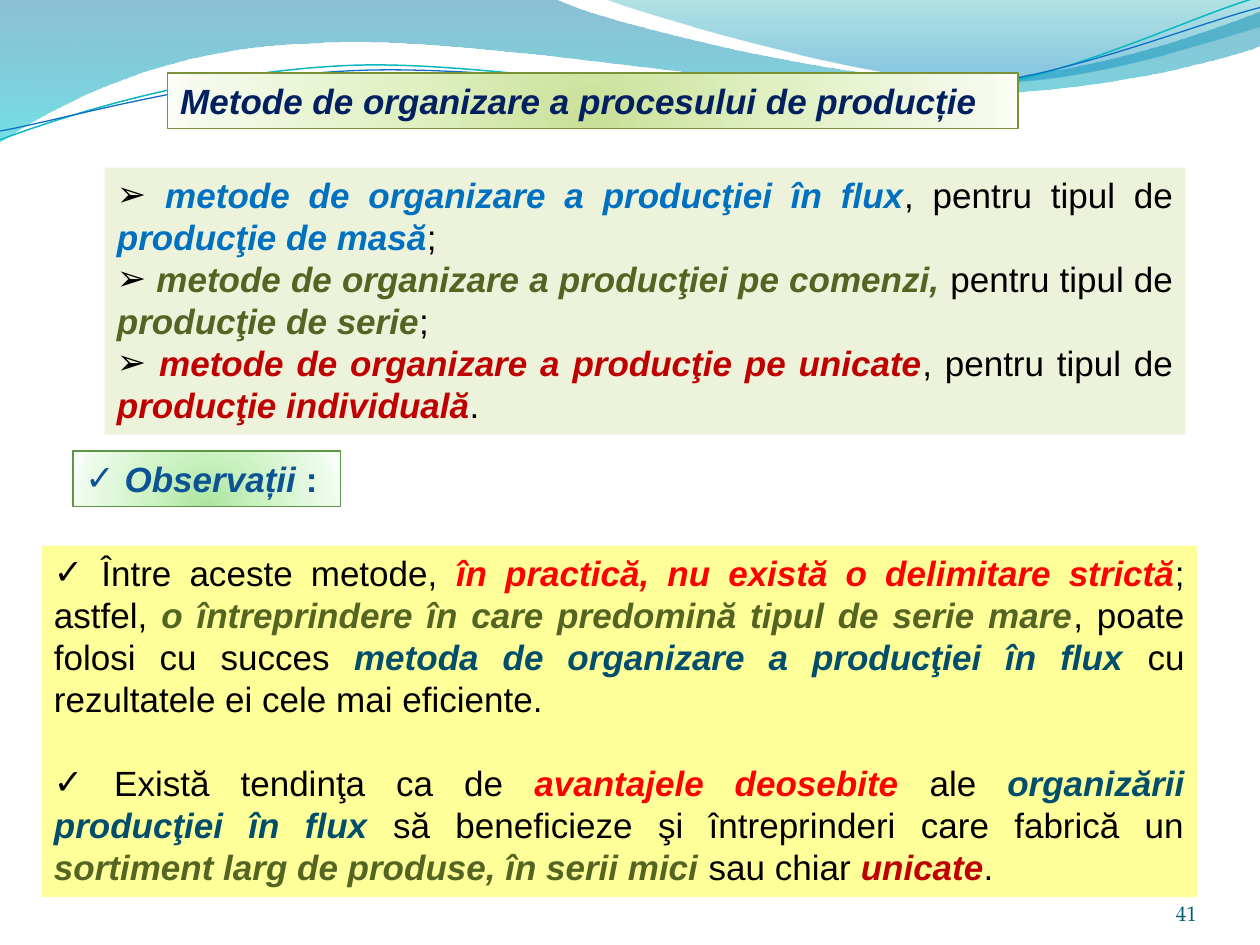
"""Build the slide on methods of organising the production process."""
from dataclasses import dataclass
from typing import Optional

import lxml.etree
import pptx
import pptx.dml.color
import pptx.enum.shapes
import pptx.enum.text
import pptx.oxml
import pptx.oxml.ns
import pptx.util

Inches = pptx.util.Inches
ALIGN = pptx.enum.text.PP_ALIGN
ANCHOR = pptx.enum.text.MSO_ANCHOR
FIT = pptx.enum.text.MSO_AUTO_SIZE

COLORS = {
    "black": "000000", "navy": "002060", "blue": "0070C0", "olive": "546422",
    "crimson": "C00000", "red": "FF0000", "petrol": "004E6C", "royal": "0B5394",
    "teal": "045D75", "pale green": "EDF3DB", "yellow": "FFFF99",
    "olive edge": "7B9135", "green edge": "5B9747",
    "wave cyan": "0AB8BF", "wave blue": "0F6FC6",
}


@dataclass
class Span:
    """A stretch of text in one format."""
    text: str
    color: str = "black"
    bold: bool = False
    italic: bool = False


@dataclass
class Stop:
    """A gradient stop: position and opacity in percent."""
    position: int
    color: str
    opacity: int = 100


@dataclass
class Wave:
    """A curved outline, where six numbers are a Bezier curve and two a line."""
    start: tuple
    segments: list
    gradient: Optional[list] = None
    line: Optional[str] = None
    width: float = 0.75


@dataclass
class Panel:
    """A filled rectangle with paragraphs of text."""
    frame: tuple
    paragraphs: list
    fill: Optional[str] = None
    gradient: Optional[list] = None
    line: Optional[str] = None
    bullet: Optional[str] = None
    wrap: bool = True
    gap: float = 0
    fit: FIT = FIT.SHAPE_TO_FIT_TEXT


def strong(text: str, color: str) -> Span:
    """Return a bold italic span."""
    return Span(text, color, True, True)


def rgb(name: str) -> pptx.dml.color.RGBColor:
    """Return a named colour."""
    return pptx.dml.color.RGBColor.from_string(COLORS[name])


def fill_gradient(shape, stops: list, direction: str) -> None:
    """Fill a shape with a gradient."""
    shape.fill.solid()
    solid = shape.element.spPr.find(pptx.oxml.ns.qn("a:solidFill"))
    marks = "".join(
        f'<a:gs pos="{stop.position * 1000}"><a:srgbClr val="{stop.color}">'
        f'<a:alpha val="{stop.opacity * 1000}"/></a:srgbClr></a:gs>' for stop in stops)
    gradient = pptx.oxml.parse_xml(
        f'<a:gradFill {pptx.oxml.ns.nsdecls("a")} rotWithShape="1">'
        f"<a:gsLst>{marks}</a:gsLst>{direction}</a:gradFill>")
    solid.getparent().replace(solid, gradient)


def bend(shape, segments: list) -> None:
    """Turn the straight sides of a freeform into their Bezier curves."""
    sides = list(shape.element.iter(pptx.oxml.ns.qn("a:lnTo")))
    for side, segment in zip(sides, segments):
        if len(segment) == 6:
            curve = lxml.etree.Element(pptx.oxml.ns.qn("a:cubicBezTo"))
            for x, y in zip(segment[::2], segment[1::2]):
                point = lxml.etree.SubElement(curve, pptx.oxml.ns.qn("a:pt"))
                point.set("x", str(Inches(x) - shape.left))
                point.set("y", str(Inches(y) - shape.top))
            side.getparent().replace(side, curve)


def draw_wave(page, wave: Wave) -> None:
    """Draw a filled wave or an open wave line."""
    builder = page.shapes.build_freeform(*map(Inches, wave.start), scale=1.0)
    ends = [tuple(map(Inches, segment[-2:])) for segment in wave.segments]
    builder.add_line_segments(ends, close=wave.gradient is not None)
    shape = builder.convert_to_shape()
    bend(shape, wave.segments)
    shape.shadow.inherit = False
    if wave.gradient:
        fill_gradient(shape, wave.gradient, '<a:lin ang="5400000" scaled="1"/>')
        shape.line.fill.background()
    else:
        shape.fill.background()
        shape.line.color.rgb = rgb(wave.line)
        shape.line.width = pptx.util.Pt(wave.width)


def write(box, paragraphs: list, *, size: float = 20, font: str = "Arial",
          align=ALIGN.JUSTIFY, anchor=ANCHOR.TOP, fit=FIT.SHAPE_TO_FIT_TEXT,
          wrap: bool = True, bullet: Optional[str] = None, gap: float = 0) -> None:
    """Write paragraphs of spans into a shape."""
    frame = box.text_frame
    frame.word_wrap, frame.auto_size, frame.vertical_anchor = wrap, fit, anchor
    for index, spans in enumerate(paragraphs):
        para = frame.add_paragraph() if index else frame.paragraphs[0]
        para.alignment = align
        para.space_before = pptx.util.Pt(gap if index else 0)
        if bullet:
            properties = para._p.get_or_add_pPr()
            properties.set("marL", "0")
            properties.set("indent", "0")
            for tag, name, value in (("a:buFont", "typeface", font), ("a:buChar", "char", bullet)):
                lxml.etree.SubElement(properties, pptx.oxml.ns.qn(tag)).set(name, value)
        for span in spans:
            run = para.add_run()
            run.text = span.text
            run.font.name, run.font.size = font, pptx.util.Pt(size)
            run.font.bold, run.font.italic = span.bold, span.italic
            run.font.color.rgb = rgb(span.color)


def format_panel(shape, panel: Panel) -> None:
    """Place, paint and fill in a panel."""
    shape.left, shape.top, shape.width, shape.height = map(Inches, panel.frame)
    if panel.gradient:
        fill_gradient(shape, panel.gradient, '<a:path path="circle"><a:fillToRect '
                      'l="50000" t="130000" r="50000" b="-30000"/></a:path>')
    else:
        shape.fill.solid()
        shape.fill.fore_color.rgb = rgb(panel.fill)
    if panel.line:
        shape.line.color.rgb = rgb(panel.line)
        shape.line.width = pptx.util.Pt(0.75)
    else:
        shape.line.fill.background()
    shape.shadow.inherit = False
    write(shape, panel.paragraphs, wrap=panel.wrap, bullet=panel.bullet, gap=panel.gap,
          fit=panel.fit, align=ALIGN.JUSTIFY if panel.wrap else ALIGN.LEFT)


def method(name: str, joint: str, kind: str, end: str, color: str) -> list:
    """Return the spans of one method of organisation."""
    return [Span(" "), strong(name, color), Span(joint), strong(kind, color), Span(end)]


WAVES = [
    Wave((0, 0), [(4.4, -0.01), (4.76, 0.17, 6.64, 0.63, 7.58, 0.63),
                  (8.53, 0.63, 9.58, 0.26, 10, 0.09), (10.01, 0.36),
                  (9.83, 0.44, 8.7, 0.76, 7.46, 0.75), (6.22, 0.75, 3.82, 0.28, 2.57, 0.34),
                  (1.29, 0.36, 0.46, 0.83, -0.01, 1.13)],
         gradient=[Stop(0, "0074A1", 45), Stop(100, "00C6CF", 55)]),
    Wave((4.79, -0.01), [(5.09, 0.11, 6.82, 0.62, 7.69, 0.65),
                         (8.56, 0.69, 9.61, 0.32, 10, 0.21), (10, 0)],
         gradient=[Stop(0, "00A1A9", 30), Stop(80, "008BBF", 45)]),
    Wave((0, 1.11), [(0.48, 0.93, 1.58, 0.57, 2.77, 0.52), (3.95, 0.47, 5.93, 0.89, 7.13, 0.8),
                     (8.33, 0.71, 9.38, 0.15, 9.98, -0.02)], line="wave cyan", width=0.85),
    Wave((0, 1.04), [(0.47, 0.96, 1.64, 0.61, 2.83, 0.56), (4.03, 0.51, 5.97, 0.84, 7.17, 0.75),
                     (8.36, 0.67, 9.41, 0.21, 10, 0.06)], line="wave blue"),
]
TITLE = Panel(
    (1.33, 0.58, 6.75, 0.44), fit=FIT.NONE, line="olive edge",
    paragraphs=[[strong("Metode de organizare a procesului de producție ", "navy")]],
    gradient=[Stop(0, "C9DF97"), Stop(43, "E0F0C1"), Stop(93, "F5FAEC"), Stop(100, "FCFEF8")])
PANELS = [
    Panel((0.83, 1.33, 8.58, 2.12), [
        method("metode de organizare a producţiei în flux", ", pentru tipul de ",
               "producţie de masă", ";", "blue"),
        method("metode de organizare a producţiei pe comenzi, ", "pentru tipul de ",
               "producţie de serie", ";", "olive"),
        method("metode de organizare a producţie pe unicate", ", pentru tipul de ",
               "producţie individuală", ".", "crimson")], fill="pale green", bullet="➢"),
    Panel((0.33, 4.33, 9.17, 2.79), [
        [Span(" Între aceste metode, "),
         strong("în practică, nu există o delimitare strictă", "red"), Span("; astfel, "),
         strong("o întreprindere în care predomină tipul de serie mare", "olive"),
         Span(", poate folosi cu succes "),
         strong("metoda de organizare a producţiei în flux ", "petrol"),
         Span("cu rezultatele ei cele mai eficiente. ")],
        [Span(" Există tendinţa ca de "), strong("avantajele deosebite ", "red"), Span("ale "),
         strong("organizării producţiei în flux ", "petrol"),
         Span("să beneficieze şi întreprinderi care fabrică un "),
         strong("sortiment larg de produse, în serii mici ", "olive"),
         Span("sau chiar "), strong("unicate", "crimson"), Span(".")]],
        fill="yellow", bullet="✓", gap=24),
    Panel((0.58, 3.58, 2.12, 0.44), [[strong(" Observații ", "royal"), Span(":", "royal", True)]],
          line="green edge", bullet="✓", wrap=False,
          gradient=[Stop(0, "ACE49F"), Stop(43, "CDF3C4"), Stop(93, "EFFBED"), Stop(100, "F9FFF8")]),
]


def main() -> None:
    """Build and save the deck."""
    deck = pptx.Presentation()
    deck.slide_width, deck.slide_height = Inches(10), Inches(7.5)
    page = deck.slides.add_slide(deck.slide_layouts[5])
    for wave in WAVES:
        draw_wave(page, wave)
    number = page.shapes.add_textbox(Inches(8.67), Inches(6.95), Inches(0.83), Inches(0.4))
    frame = number.text_frame
    frame.margin_left = frame.margin_top = frame.margin_right = frame.margin_bottom = 0
    write(number, [[Span("41", "teal")]], size=12, font="TeX Gyre Pagella",
          align=ALIGN.RIGHT, anchor=ANCHOR.BOTTOM, fit=FIT.NONE)
    title = page.shapes.title
    title.element.getparent().append(title.element)
    format_panel(title, TITLE)
    for panel in PANELS:
        rectangle = pptx.enum.shapes.MSO_SHAPE.RECTANGLE
        format_panel(page.shapes.add_shape(rectangle, *map(Inches, panel.frame)), panel)
    deck.save("out.pptx")


if __name__ == "__main__":
    main()
